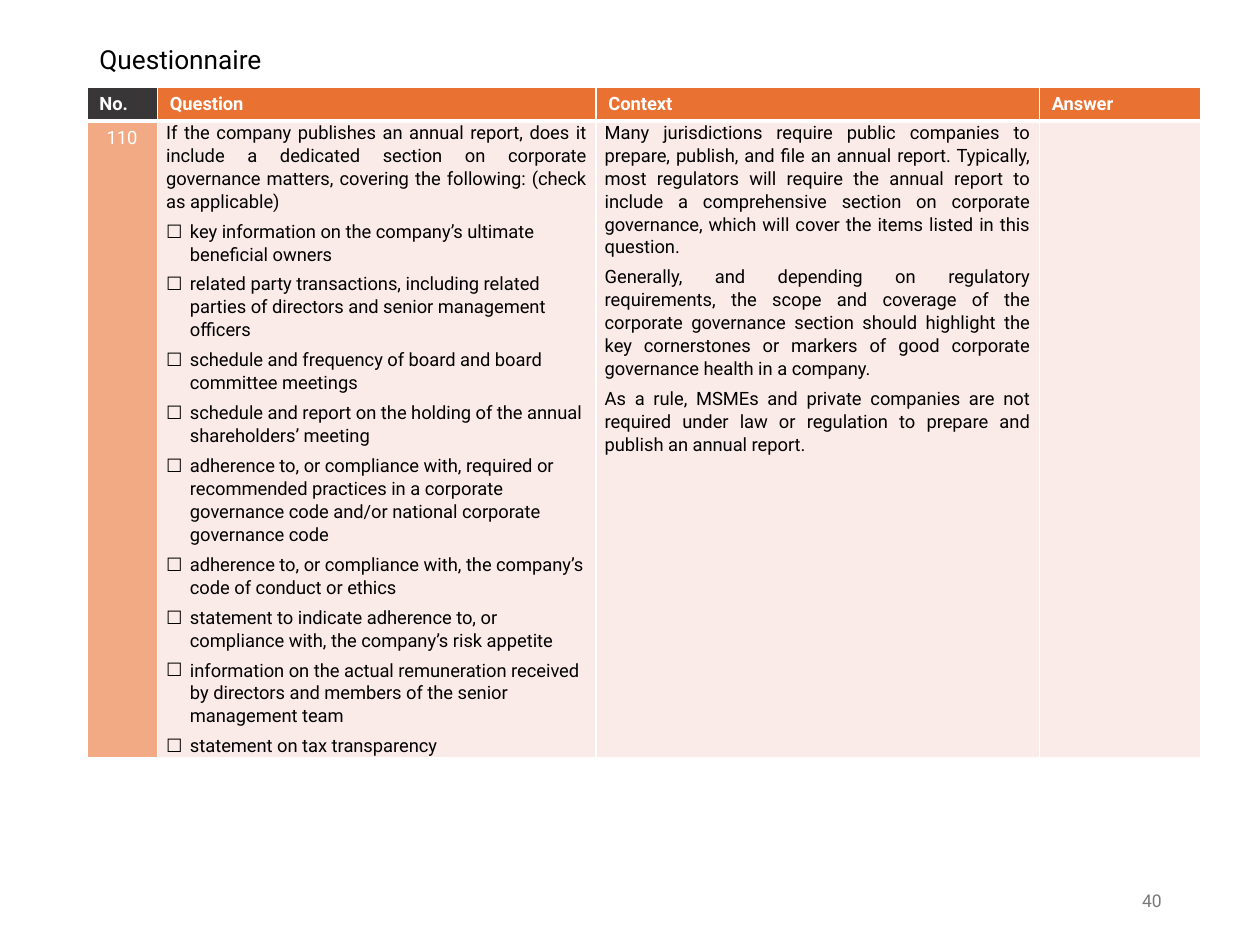
"""Build the questionnaire slide with its four-column table."""
from dataclasses import dataclass

from lxml.etree import SubElement
from pptx import Presentation
from pptx.dml.color import RGBColor
from pptx.enum.text import MSO_ANCHOR, PP_ALIGN
from pptx.oxml.ns import qn
from pptx.util import Cm, Pt

FONT = "Roboto"
WHITE, BLACK = "FFFFFF", "000000"
LEFT, TOP = 1.75, 1.75
HEAD_TALL, BODY_TALL = 0.66, 12.74


@dataclass
class Column:
    head: str
    width: float
    head_fill: str
    fill: str


@dataclass
class Item:
    text: str
    check: bool = False


COLUMNS = [
    Column("No.", 1.42, "393637", "F2AA84"),
    Column("Question", 8.84, "E97132", "FBEBE8"),
    Column("Context", 8.94, "E97132", "FBEBE8"),
    Column("Answer", 3.25, "E97132", "FBEBE8"),
]

CHECKS = [
    "key information on the company’s ultimate beneficial owners",
    "related party transactions, including related parties of directors and senior management officers",
    "schedule and frequency of board and board committee meetings",
    "schedule and report on the holding of the annual shareholders’ meeting",
    "adherence to, or compliance with, required or recommended practices in a corporate "
    "governance code and/or national corporate governance code",
    "adherence to, or compliance with, the company’s code of conduct or ethics",
    "statement to indicate adherence to, or compliance with, the company’s risk appetite",
    "information on the actual remuneration received by directors and members of the "
    "senior management team",
    "statement on tax transparency",
]

QUESTION = [
    Item("If the company publishes an annual report, does it include a dedicated section on "
         "corporate governance matters, covering the following: (check as applicable)"),
    *[Item(text, check=True) for text in CHECKS],
]

CONTEXT = [
    Item("Many jurisdictions require public companies to prepare, publish, and file an annual "
         "report. Typically, most regulators will require the annual report to include a "
         "comprehensive section on corporate governance, which will cover the items listed in "
         "this question."),
    Item("Generally, and depending on regulatory requirements, the scope and coverage of the "
         "corporate governance section should highlight the key cornerstones or markers of good "
         "corporate governance health in a company."),
    Item("As a rule, MSMEs and private companies are not required under law or regulation to "
         "prepare and publish an annual report."),
]


def color(code: str) -> RGBColor:
    """Turn a hex string into a colour."""
    return RGBColor.from_string(code)


def style(para, size: float, code: str, bold: bool = False) -> None:
    """Format every run of a paragraph."""
    for run in para.runs:
        font = run.font
        font.name, font.size, font.bold = FONT, Pt(size), bold
        font.color.rgb = color(code)


def place(shape, left: float, top: float, width: float, height: float) -> None:
    """Set the position and size of a shape in centimetres."""
    shape.left, shape.top = Cm(left), Cm(top)
    shape.width, shape.height = Cm(width), Cm(height)


def paint(cell, fill: str, base: float) -> None:
    """Give a cell white borders and a solid fill."""
    props = cell._tc.get_or_add_tcPr()
    for side, width in (("L", 1), ("R", 1), ("T", 1), ("B", base)):
        line = SubElement(props, qn(f"a:ln{side}"), w=str(Pt(width)))
        SubElement(SubElement(line, qn("a:solidFill")), qn("a:srgbClr"), val=WHITE)
    cell.fill.solid()
    cell.fill.fore_color.rgb = color(fill)


def add_check(para) -> None:
    """Give a paragraph a hanging check box."""
    props = para._p.get_or_add_pPr()
    props.set("marL", str(Cm(0.48)))
    props.set("indent", str(Cm(-0.48)))
    SubElement(props, qn("a:buFont"), typeface=FONT)
    SubElement(props, qn("a:buChar"), char="☐")


def write(cell, items: list[Item]) -> None:
    """Write paragraphs and check boxes into a cell."""
    cell.margin_left = cell.margin_right = Cm(0.18)
    cell.margin_top = cell.margin_bottom = 0
    frame = cell.text_frame
    for spot, item in enumerate(items):
        para = frame.add_paragraph() if spot else frame.paragraphs[0]
        para.text = item.text
        if item.check:
            add_check(para)
        para.alignment = PP_ALIGN.LEFT if item.check else PP_ALIGN.JUSTIFY
        para.line_spacing = 1.07
        para.space_before = Pt(2 if spot else 0)
        para.space_after = Pt(2)
        style(para, 10.5, BLACK)


def add_title(slide) -> None:
    """Fill and format the title."""
    title = slide.shapes.title
    place(title, LEFT, 0.69, 21.9, 1.06)
    frame = title.text_frame
    frame.text = "Questionnaire"
    frame.vertical_anchor = MSO_ANCHOR.MIDDLE
    para = frame.paragraphs[0]
    para.alignment = PP_ALIGN.LEFT
    para.line_spacing = 0.9
    style(para, 15, BLACK)


def add_grid(slide) -> None:
    """Draw the question table."""
    width = sum(col.width for col in COLUMNS)
    grid = slide.shapes.add_table(2, len(COLUMNS), Cm(LEFT), Cm(TOP), Cm(width),
                                  Cm(HEAD_TALL + BODY_TALL)).table
    grid.horz_banding = False
    grid.rows[0].height, grid.rows[1].height = Cm(HEAD_TALL), Cm(BODY_TALL)
    for spot, col in enumerate(COLUMNS):
        grid.columns[spot].width = Cm(col.width)
        head = grid.cell(0, spot)
        paint(head, col.head_fill, 3)
        head.text_frame.text = col.head
        style(head.text_frame.paragraphs[0], 10.5, WHITE, bold=True)
        paint(grid.cell(1, spot), col.fill, 1)
    number = grid.cell(1, 0).text_frame
    number.text = "110"
    number.paragraphs[0].alignment = PP_ALIGN.CENTER
    style(number.paragraphs[0], 10.5, WHITE)
    write(grid.cell(1, 1), QUESTION)
    write(grid.cell(1, 2), CONTEXT)


def add_page(slide) -> None:
    """Write the page number."""
    box = slide.shapes.add_textbox(Cm(16.71), Cm(17.65), Cm(6.96), Cm(1.02))
    frame = box.text_frame
    frame.word_wrap = True
    frame.vertical_anchor = MSO_ANCHOR.MIDDLE
    frame.text = "40"
    frame.paragraphs[0].alignment = PP_ALIGN.RIGHT
    style(frame.paragraphs[0], 10, "797979")


def main() -> None:
    """Build and save the slide."""
    deck = Presentation()
    deck.slide_width, deck.slide_height = Cm(25.4), Cm(19.05)
    slide = deck.slides.add_slide(deck.slide_layouts[5])
    add_title(slide)
    add_grid(slide)
    add_page(slide)
    deck.save("out.pptx")


if __name__ == "__main__":
    main()
